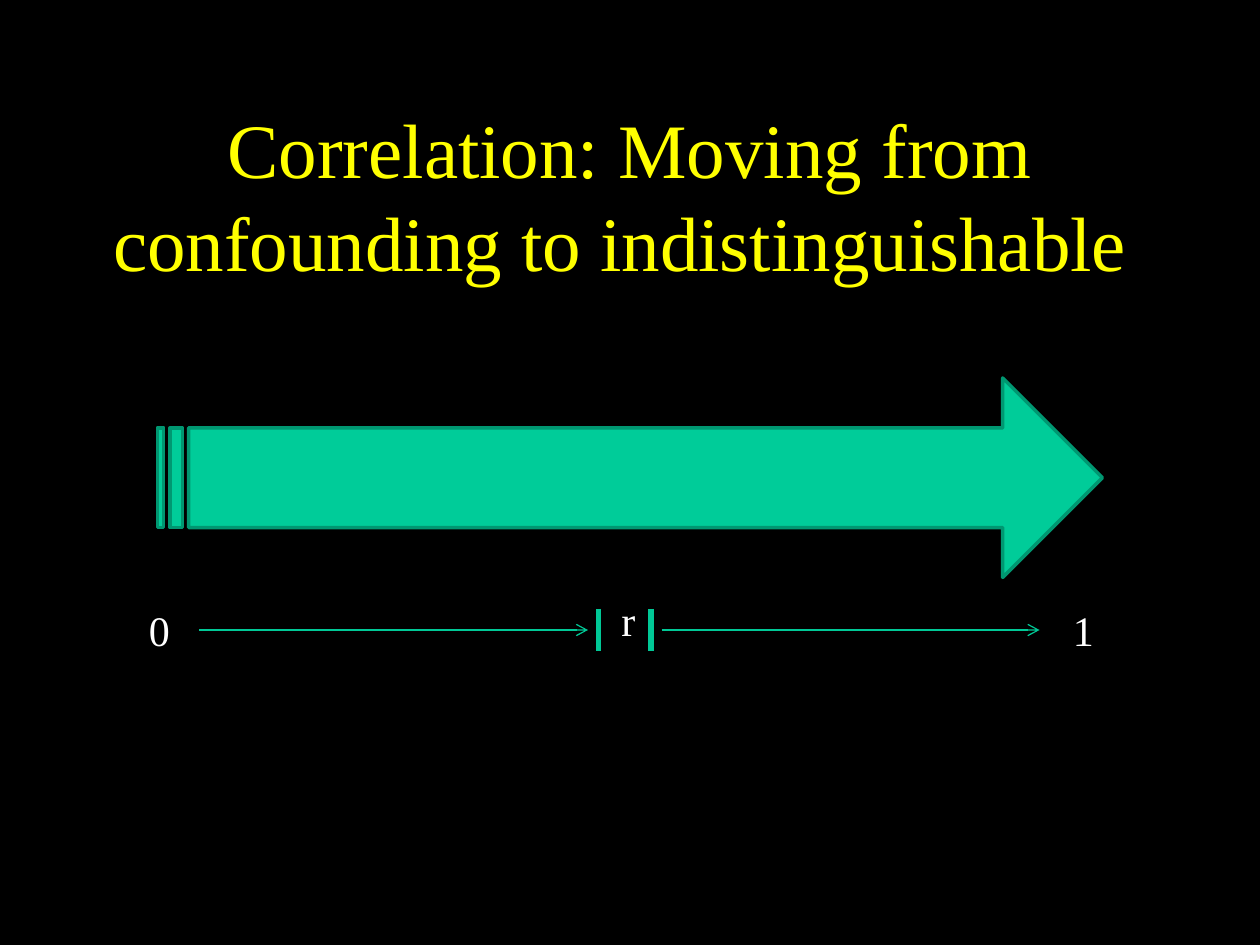
from lxml import etree
from pptx import Presentation, util as u
from pptx.dml.color import RGBColor
from pptx.enum import shapes, text
from pptx.oxml.ns import qn

# Content: lengths are columns and rows of a grid, 12 to the inch
COLS, ROWS = 120, 90
TITLE = "Correlation: Moving from confounding to indistinguishable "
BODY = (15, 36, 90, 19)
AXIS = 60  # row of the scale
LABELS = [  # wording, column, row, width
    ("0", 13, 57, 4),
    ("r", 58, 56, 3),
    ("1", 101, 57, 6),
]
TICKS = [57, 62]
SPANS = [(19, 56), (63, 99)]
FONT = "Times New Roman"
BLACK, YELLOW, WHITE = "000000", "FFFF00", "FFFFFF"
GREEN, EDGE, RULE = "00CC99", "009771", "00C896"


def cell(*nums):
    return [u.Inches(n / 12) for n in nums]


def tint(fmt, hue):
    fmt.solid()
    fmt.fore_color.rgb = RGBColor.from_string(hue)


def write(slide, words, box, size, hue, **form):
    frame = slide.shapes.add_textbox(*cell(*box)).text_frame
    frame.word_wrap = True
    para = frame.paragraphs[0]
    run = para.add_run()
    run.text = words
    for key, val in {"name": FONT, "size": u.Pt(size)}.items():
        setattr(run.font, key, val)
    tint(run.font.fill, hue)
    for key, val in form.items():
        setattr(para if key == "alignment" else frame, key, val)


def rule(slide, ends, width, head=False):
    line = slide.shapes.add_connector(
        shapes.MSO_CONNECTOR.STRAIGHT, *cell(*ends))
    line.line.width = u.Pt(width)
    tint(line.line.fill, RULE)
    props = line.line._get_or_add_ln()
    if head:
        etree.SubElement(props, qn("a:tailEnd"), type="arrow")
    etree.SubElement(props.getparent(), qn("a:effectLst"))


def main():
    deck = Presentation()
    deck.slide_width, deck.slide_height = cell(COLS, ROWS)
    slide = deck.slides.add_slide(deck.slide_layouts[6])
    tint(slide.background.fill, BLACK)

    # Title
    write(slide, TITLE, (9, 8, 102, 21), 44, YELLOW,
          alignment=text.PP_ALIGN.CENTER,
          vertical_anchor=text.MSO_ANCHOR.MIDDLE)

    # Striped arrow
    arrow = slide.shapes.add_shape(
        shapes.MSO_SHAPE.STRIPED_RIGHT_ARROW, *cell(*BODY))
    arrow.shadow.inherit = False
    tint(arrow.fill, GREEN)
    tint(arrow.line.fill, EDGE)
    arrow.line.width = u.Pt(2)

    # Scale from 0 to 1
    for words, col, row, wide in LABELS:
        write(slide, words, (col, row, wide, 6), 24, WHITE)
    for col in TICKS:
        rule(slide, (col, AXIS - 2, col, AXIS + 2), 3)
    for start, end in SPANS:
        rule(slide, (start, AXIS, end, AXIS), 0.75, head=True)

    deck.save("out.pptx")


if __name__ == "__main__":
    main()
